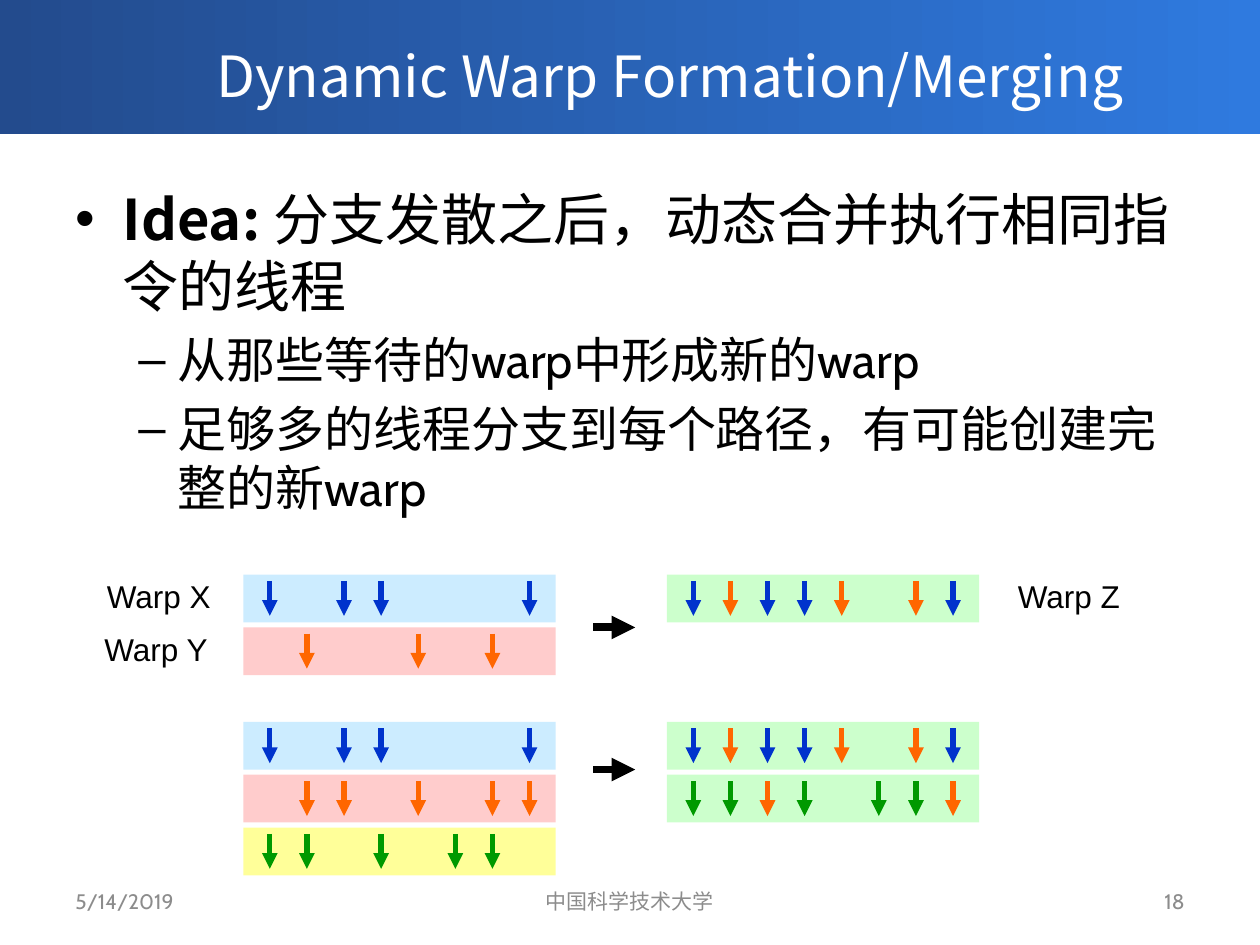
"""Build the slide on dynamic warp formation and merging."""
from lxml.etree import SubElement as Sub
from pptx import Presentation
from pptx.dml.color import RGBColor as Rgb
from pptx.enum.shapes import MSO_CONNECTOR as Conn, MSO_SHAPE as Form
from pptx.enum.text import MSO_ANCHOR as Anchor, PP_ALIGN as Align
from pptx.oxml.ns import qn
from pptx.util import Pt

BLACK, WHITE = Rgb(0, 0, 0), Rgb(255, 255, 255)
GRAY = Rgb(0x8C, 0x8C, 0x8C)
NAVY, AZURE = Rgb(0x23, 0x4B, 0x8D), Rgb(0x2F, 0x7A, 0xDF)
SKY, PINK = Rgb(0xCC, 0xEC, 0xFF), Rgb(0xFF, 0xCC, 0xCC)
MINT, LEMON = Rgb(0xCC, 0xFF, 0xCC), Rgb(0xFF, 0xFF, 0x99)
LANES = {"B": Rgb(0, 0x33, 0xCC), "O": Rgb(0xFF, 0x66, 0), "G": Rgb(0, 0x99, 0)}
NOTO, CABIN = "Noto Sans CJK SC", "Cabin"

TITLE = "Dynamic Warp Formation/Merging"
HEAD = {"size": Pt(32.4), "name": NOTO, "color": WHITE}
TOP = {"size": Pt(32), "name": NOTO, "color": BLACK}
SUB = {"size": Pt(28), "name": CABIN, "color": BLACK}
FOOT = {"size": Pt(12), "name": CABIN, "color": GRAY}
TAG = {"size": Pt(18), "name": "Arial", "color": BLACK}

BODY = [
    (0, [("Idea: ", {**TOP, "bold": True}),
         ("分支发散之后，动态合并执行相同指令的线程", TOP)]),
    (1, [("从那些等待的warp中形成新的warp", SUB)]),
    (1, [("足够多的线程分支到每个路径，有可能创建完整的新warp", SUB)]),
]
LEVELS = [("•", 27, -27, 38, 0), ("–", 58.5, -22.5, 34, 5.6)]
FEET = [
    ("5/14/2019", 36, 168, Align.LEFT),
    ("中国科学技术大学", 246, 228, Align.CENTER),
    ("18", 516, 168, Align.RIGHT),
]
TAGS = [("Warp X", 54, 326), ("Warp Y", 52.5, 356.3), ("Warp Z", 574.5, 326)]
MERGES = [
    (328.3, [(SKY, "B.BB...B"), (PINK, ".O..O.O.")], [(MINT, "BOBBO.OB")]),
    (412.5, [(SKY, "B.BB...B"), (PINK, ".OO.O.OO"), (LEMON, "GG.G.GG.".replace("GG.G.GG.", "GG.G.GG."))],
     [(MINT, "BOBBO.OB"), (MINT, "GGOG.GGO")]),
]
LEFT, RIGHT, WIDE, HIGH = 139, 381, 178.5, 27.3
ROW, SLOT, INSET, DROP, LONG = 30.2, 21.2, 15.2, 3.6, 20


def write(para, text, form):
    run = para.add_run()
    run.text = text
    for key, val in form.items():
        if key == "color":
            run.font.color.rgb = val
        else:
            setattr(run.font, key, val)
    Sub(run.font._element, qn("a:ea")).set("typeface", NOTO)


def box(slide, x, y, w, h, **form):
    frame = slide.shapes.add_textbox(Pt(x), Pt(y), Pt(w), Pt(h)).text_frame
    for key, val in {"word_wrap": True, **form}.items():
        setattr(frame, key, val)
    return frame


def label(slide, text, spot, form, align=Align.LEFT, **rest):
    para = box(slide, *spot, **rest).paragraphs[0]
    para.alignment = align
    write(para, text, form)


def rect(slide, x, y, w, h):
    shape = slide.shapes.add_shape(Form.RECTANGLE, Pt(x), Pt(y), Pt(w), Pt(h))
    shape.shadow.inherit = False
    shape.line.fill.background()
    return shape


def arrow(slide, x, y, dx, dy, color, width):
    link = slide.shapes.add_connector(
        Conn.STRAIGHT, Pt(x), Pt(y), Pt(x + dx), Pt(y + dy))
    link.line.color.rgb = color
    link.line.width = Pt(width)
    Sub(link.line._get_or_add_ln(), qn("a:tailEnd")).set("type", "triangle")
    Sub(link._element.spPr, qn("a:effectLst"))


def stack(slide, x, y, warps):
    for row, (color, lanes) in enumerate(warps):
        top = y + row * ROW
        bar = rect(slide, x, top, WIDE, HIGH)
        bar.fill.solid()
        bar.fill.fore_color.rgb = color
        for slot, lane in enumerate(lanes):
            if lane in LANES:
                arrow(slide, x + INSET + slot * SLOT, top + DROP,
                      0, LONG, LANES[lane], 3)


def outline(slide):
    frame = box(slide, 36, 99.4, 648, 188, margin_top=Pt(6.6))
    for num, (level, runs) in enumerate(BODY):
        para = frame.add_paragraph() if num else frame.paragraphs[0]
        mark, left, hang, pitch, gap = LEVELS[level]
        props = para._p.get_or_add_pPr()
        props.set("marL", str(Pt(left)))
        props.set("indent", str(Pt(hang)))
        Sub(props, qn("a:buFont")).set("typeface", "Arial")
        Sub(props, qn("a:buChar")).set("char", mark)
        para.level = level
        para.line_spacing = Pt(pitch)
        para.space_before = Pt(gap)
        for text, form in runs:
            write(para, text, form)


def main():
    deck = Presentation()
    deck.slide_width, deck.slide_height = Pt(720), Pt(540)
    slide = deck.slides.add_slide(deck.slide_layouts[6])
    band = rect(slide, 0, 0, 720, 76.8)
    band.fill.gradient()
    band.fill.gradient_angle = 0
    for stop, color, pos in zip(band.fill.gradient_stops, (NAVY, AZURE), (0, 1)):
        stop.color.rgb = color
        stop.position = pos
    label(slide, TITLE, (81.5, 11.5, 602.5, 62), HEAD, Align.CENTER,
          vertical_anchor=Anchor.MIDDLE)
    outline(slide)
    for text, x, wide, align in FEET:
        label(slide, text, (x, 500.5, wide, 28.75), FOOT, align,
              vertical_anchor=Anchor.MIDDLE)
    for y, before, after in MERGES:
        stack(slide, LEFT, y, before)
        stack(slide, RIGHT, y, after)
        mid = y + (ROW + HIGH) / 2 + (1.5 if len(before) == 2 else -1.5)
        arrow(slide, 339, mid, 24, 0, BLACK, 4.5)
    for text, x, y in TAGS:
        label(slide, text, (x, y, 74, 29), TAG, word_wrap=False)
    deck.save("out.pptx")


if __name__ == "__main__":
    main()
